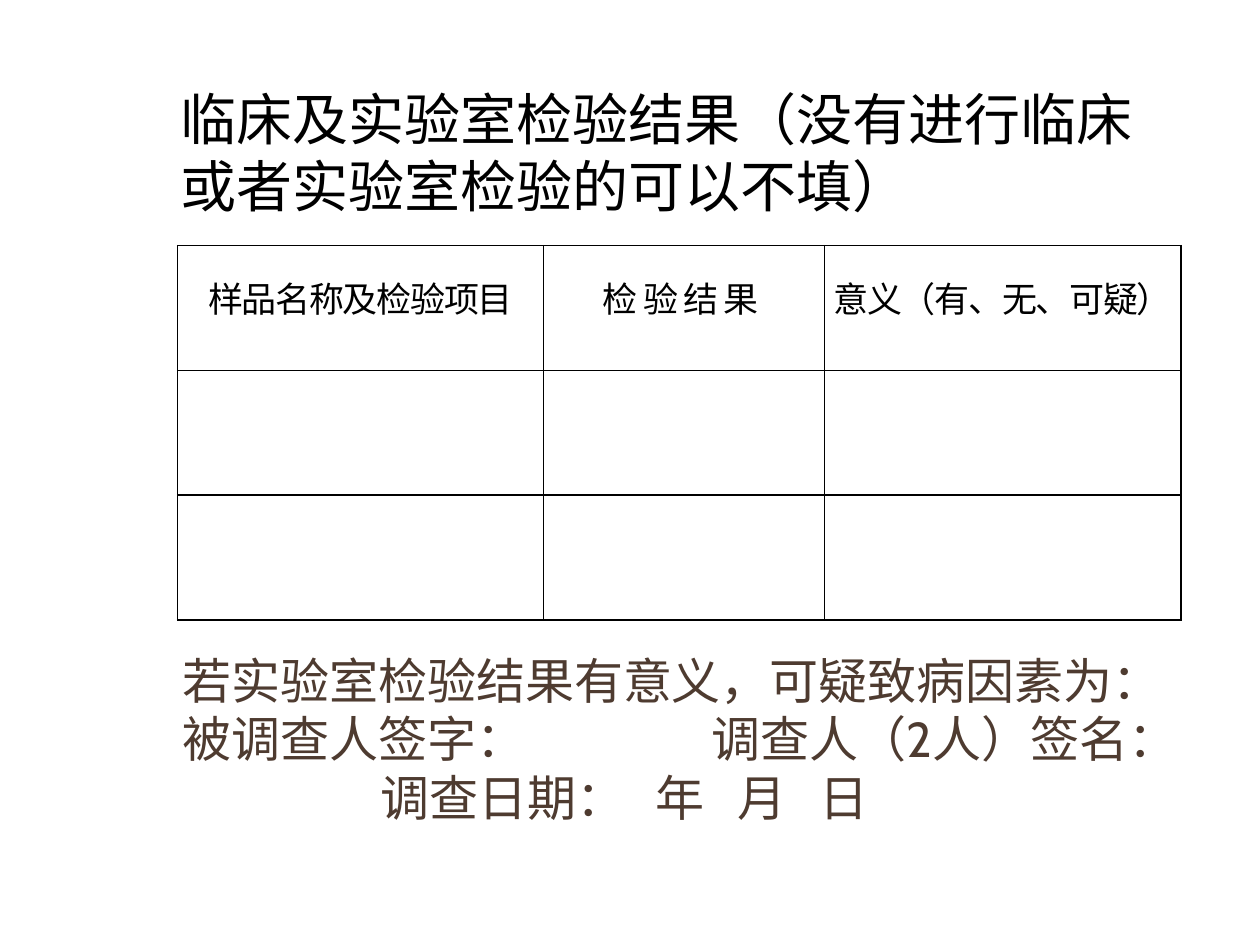
import pptx
import pptx.util
import pptx.dml.color
import pptx.enum.text
import pptx.oxml
import pptx.oxml.ns

Pt = pptx.util.Pt
COLORS = {"ink": "000000", "brown": "4E3B30"}
SERIF, SANS = "Times New Roman", "Cabin"

TITLE = "临床及实验室检验结果（没有进行临床或者实验室检验的可以不填）"
HEADS = ["样品名称及检验项目", "检 验 结 果 ", "意义（有、无、可疑）"]
COLS = [209, 160.5, 204]
ROWS, HIGH = 3, 71.3
# Each line of the form: its text and its tab stops
FORM = [
    ("若实验室检验结果有意义，可疑致病因素为：", []),
    ("被调查人签字：\t调查人（2人）签名：", [302]),
    ("\t调查日期：\t年\t月\t日", [113, 270, 317, 364]),
]


def add_run(para, text, font, size, color):
    run = para.add_run()
    run.text = text
    run.font.name = font
    run.font.size = Pt(size)
    run.font.color.rgb = pptx.dml.color.RGBColor.from_string(COLORS[color])
    return run


def add_xml(parent, xml):
    space = pptx.oxml.ns.nsdecls("a")
    parent.append(pptx.oxml.parse_xml(xml.replace(">", f" {space}>", 1)))


def add_box(slide, left, top, width, height):
    frame = slide.shapes.add_textbox(
        Pt(left), Pt(top), Pt(width), Pt(height)).text_frame
    frame.word_wrap = True
    return frame


def set_tabs(para, stops):
    if stops:
        tabs = "".join(f'<a:tab pos="{Pt(s)}" algn="l"/>' for s in stops)
        add_xml(para._p.get_or_add_pPr(), f"<a:tabLst>{tabs}</a:tabLst>")


def style_cell(cell):
    cell.margin_left = cell.margin_right = Pt(5)
    cell.margin_top = cell.margin_bottom = 0
    cell.vertical_anchor = pptx.enum.text.MSO_ANCHOR.MIDDLE
    props = cell._tc.get_or_add_tcPr()
    for side in ("lnL", "lnR", "lnT", "lnB"):
        add_xml(props, f'<a:{side} w="{Pt(1)}"><a:solidFill><a:srgbClr '
                       f'val="{COLORS["ink"]}"/></a:solidFill></a:{side}>')
    cell.fill.background()


def add_grid(slide):
    table = slide.shapes.add_table(
        ROWS, len(COLS), Pt(101.5), Pt(140.4),
        Pt(sum(COLS)), Pt(ROWS * HIGH)).table
    table.first_row = table.horz_banding = False
    for col, width in zip(table.columns, COLS):
        col.width = Pt(width)
    for row in table.rows:
        row.height = Pt(HIGH)
    for cell in table.iter_cells():
        style_cell(cell)
    for cell, text in zip(table.rows[0].cells, HEADS):
        para = cell.text_frame.paragraphs[0]
        para.alignment = pptx.enum.text.PP_ALIGN.CENTER
        para.line_spacing = Pt(16)
        run = add_run(para, text, SERIF, 20, "ink")
        run.font._element.set("spc", "-80")


def add_form(slide):
    frame = add_box(slide, 95.8, 371.5, 584.6, 114.5)
    frame.margin_left, frame.margin_top = Pt(8.6), 0
    for i, (text, stops) in enumerate(FORM):
        para = frame.add_paragraph() if i else frame.paragraphs[0]
        set_tabs(para, stops)
        add_run(para, text, SANS, 28, "brown")


def main():
    deck = pptx.Presentation()
    deck.slide_width, deck.slide_height = Pt(720), Pt(540)
    slide = deck.slides.add_slide(deck.slide_layouts[6])
    add_grid(slide)
    add_form(slide)
    title = add_box(slide, 95.8, 44.6, 573.8, 85)
    add_run(title.paragraphs[0], TITLE, SERIF, 32, "ink")
    deck.save("out.pptx")


if __name__ == "__main__":
    main()
